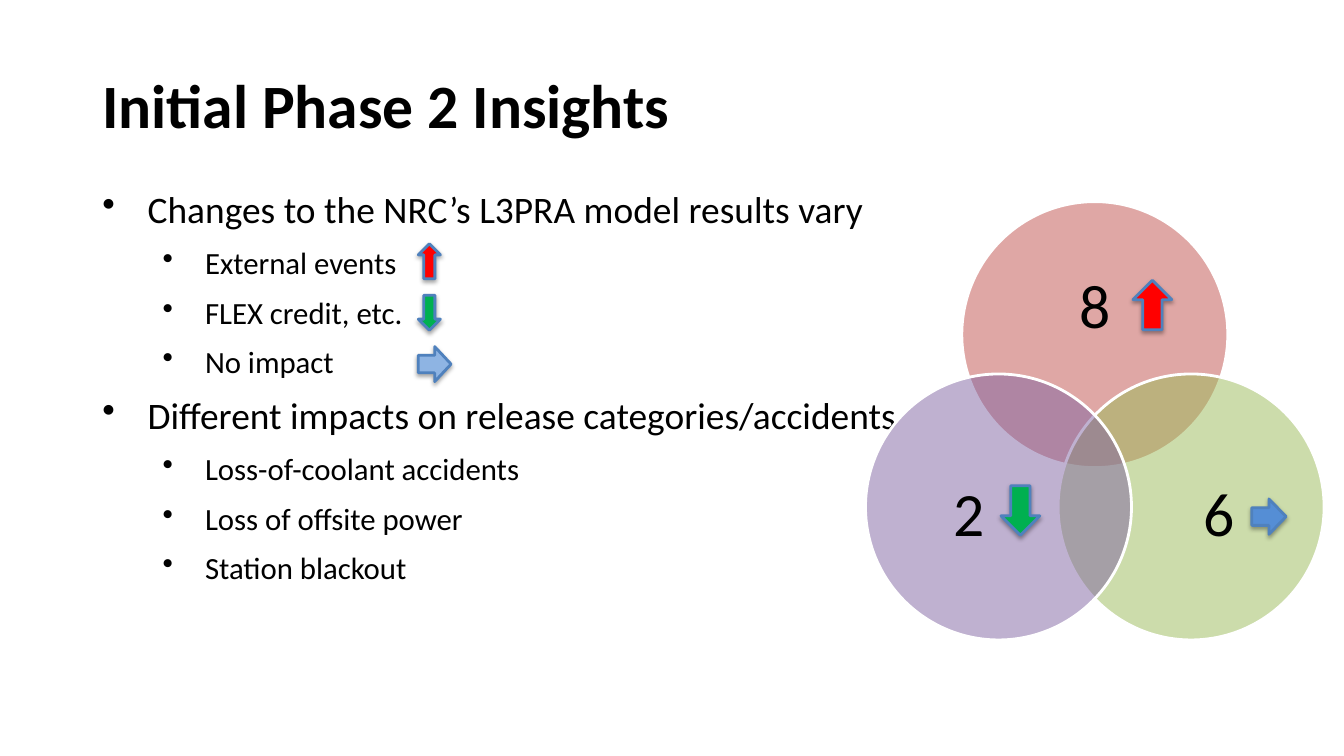
from dataclasses import dataclass

from lxml import etree
from pptx import Presentation
from pptx import util as u
from pptx.dml import color
from pptx.enum import shapes, text
from pptx.oxml import ns

SHAPE = shapes.MSO_SHAPE


@dataclass(frozen=True)
class Theme:
    font: str = "Calibri"
    ink: str = "000000"
    white: str = "FFFFFF"
    outline: str = "4F81BD"
    rise: str = "FF0000"
    fall: str = "00B050"
    same_light: str = "8EB4E3"
    same: str = "558ED5"
    rose: str = "C0504D"
    olive: str = "9BBB59"
    violet: str = "8064A2"
    large: float = 44
    topic: float = 26.7
    detail: float = 22
    line: float = 2


def add_xml(parent, tag, **attributes):
    return etree.SubElement(parent, ns.qn(tag), attributes)


class SlideBuilder:
    def __init__(self, slide, theme):
        self.slide, self.theme = slide, theme

    def style_font(self, paragraph, size, bold=False):
        font = paragraph.font
        font.name, font.size, font.bold = self.theme.font, u.Pt(size), bold
        font.color.rgb = color.RGBColor.from_string(self.theme.ink)

    def text_frame(self, left, top, width, height):
        box = self.slide.shapes.add_textbox(*map(u.Pt, (left, top, width, height)))
        box.text_frame.word_wrap = True
        return box.text_frame

    def title(self, wording, *area):
        heading = self.text_frame(*area).paragraphs[0]
        heading.text = wording
        self.style_font(heading, self.theme.large, bold=True)

    def bullets(self, items, *area):
        frame = self.text_frame(*area)
        levels = ((32.4, -32.4, self.theme.topic), (73.4, -30.2, self.theme.detail))
        for index, (level, wording) in enumerate(items):
            item = frame.add_paragraph() if index else frame.paragraphs[0]
            item.text = wording
            item.level = level
            margin, indent, size = levels[level]
            properties = item._p.get_or_add_pPr()
            properties.set("marL", str(u.Pt(margin)))
            properties.set("indent", str(u.Pt(indent)))
            add_xml(properties, "a:buChar", char="•")
            item.space_before = u.Pt(9 if index else 0)
            self.style_font(item, size)

    def number(self, wording, center_x, center_y, width=80, height=74):
        frame = self.text_frame(center_x - width / 2, center_y - height / 2, width, height)
        frame.margin_left = frame.margin_right = frame.margin_top = frame.margin_bottom = 0
        frame.vertical_anchor = text.MSO_ANCHOR.MIDDLE
        count = frame.paragraphs[0]
        count.text = wording
        count.alignment = text.PP_ALIGN.CENTER
        count.line_spacing = 0.9
        self.style_font(count, self.theme.large)

    def outlined(self, kind, fill, line, area):
        shape = self.slide.shapes.add_shape(kind, *map(u.Pt, area))
        shape.shadow.inherit = False
        shape.fill.solid()
        shape.fill.fore_color.rgb = color.RGBColor.from_string(fill)
        shape.line.color.rgb = color.RGBColor.from_string(line)
        shape.line.width = u.Pt(self.theme.line)
        return shape

    def circle(self, fill, center_x, center_y, diameter=190):
        area = (center_x - diameter / 2, center_y - diameter / 2, diameter, diameter)
        circle = self.outlined(SHAPE.OVAL, fill, self.theme.white, area)
        tint = circle._element.spPr.find(ns.qn("a:solidFill"))[0]
        add_xml(tint, "a:alpha", val="50000")

    def arrow(self, kind, fill, *area):
        arrow = self.outlined(kind, fill, self.theme.outline, area)
        effects = arrow._element.spPr.find(ns.qn("a:effectLst"))
        shadow = add_xml(effects, "a:outerShdw", blurRad=str(u.Pt(3)), dist=str(u.Pt(1.8)),
                         dir="5400000", rotWithShape="0")
        add_xml(add_xml(shadow, "a:srgbClr", val=self.theme.ink), "a:alpha", val="35000")


def main():
    deck = Presentation()
    deck.slide_width, deck.slide_height = u.Pt(960), u.Pt(540)
    theme = Theme()
    page = SlideBuilder(deck.slides.add_slide(deck.slide_layouts[6]), theme)

    # Title and findings
    page.title("Initial Phase 2 Insights", 66, 44.6, 828, 57)
    page.bullets([
        (0, "Changes to the NRC’s L3PRA model results vary"),
        (1, "External events"),
        (1, "FLEX credit, etc."),
        (1, "No impact"),
        (0, "Different impacts on release categories/accidents"),
        (1, "Loss-of-coolant accidents"),
        (1, "Loss of offsite power"),
        (1, "Station blackout"),
    ], 66, 129.6, 828, 152.6)

    # Direction of each change, beside its bullet
    directions = [
        (SHAPE.UP_ARROW, theme.rise, 15.8),
        (SHAPE.DOWN_ARROW, theme.fall, 15.8),
        (SHAPE.RIGHT_ARROW, theme.same_light, 23.4),
    ]
    for row, (kind, fill, width) in enumerate(directions):
        page.arrow(kind, fill, 298.8, 174.2 + 36.7 * row, width, 25)

    # Venn diagram: circle center, then number center
    venn_x, upper_y, lower_y, spread = 782, 239, 362.1, 68.8
    groups = [
        ("8", theme.rose, venn_x, upper_y, 782.3, 220.3),
        ("6", theme.olive, venn_x + spread, lower_y, 870.5, 369),
        ("2", theme.violet, venn_x - spread, lower_y, 692.6, 369),
    ]
    for count, fill, circle_x, circle_y, count_x, count_y in groups:
        page.circle(fill, circle_x, circle_y)
        page.number(count, count_x, count_y)

    # Direction of each group
    page.arrow(SHAPE.UP_ARROW, theme.rise, 809.3, 200.2, 27.7, 35.3)
    page.arrow(SHAPE.DOWN_ARROW, theme.fall, 715, 347, 27.7, 35.3)
    page.arrow(SHAPE.RIGHT_ARROW, theme.same, 894.2, 356.4, 24.5, 25.2)

    deck.save("out.pptx")


if __name__ == "__main__":
    main()
